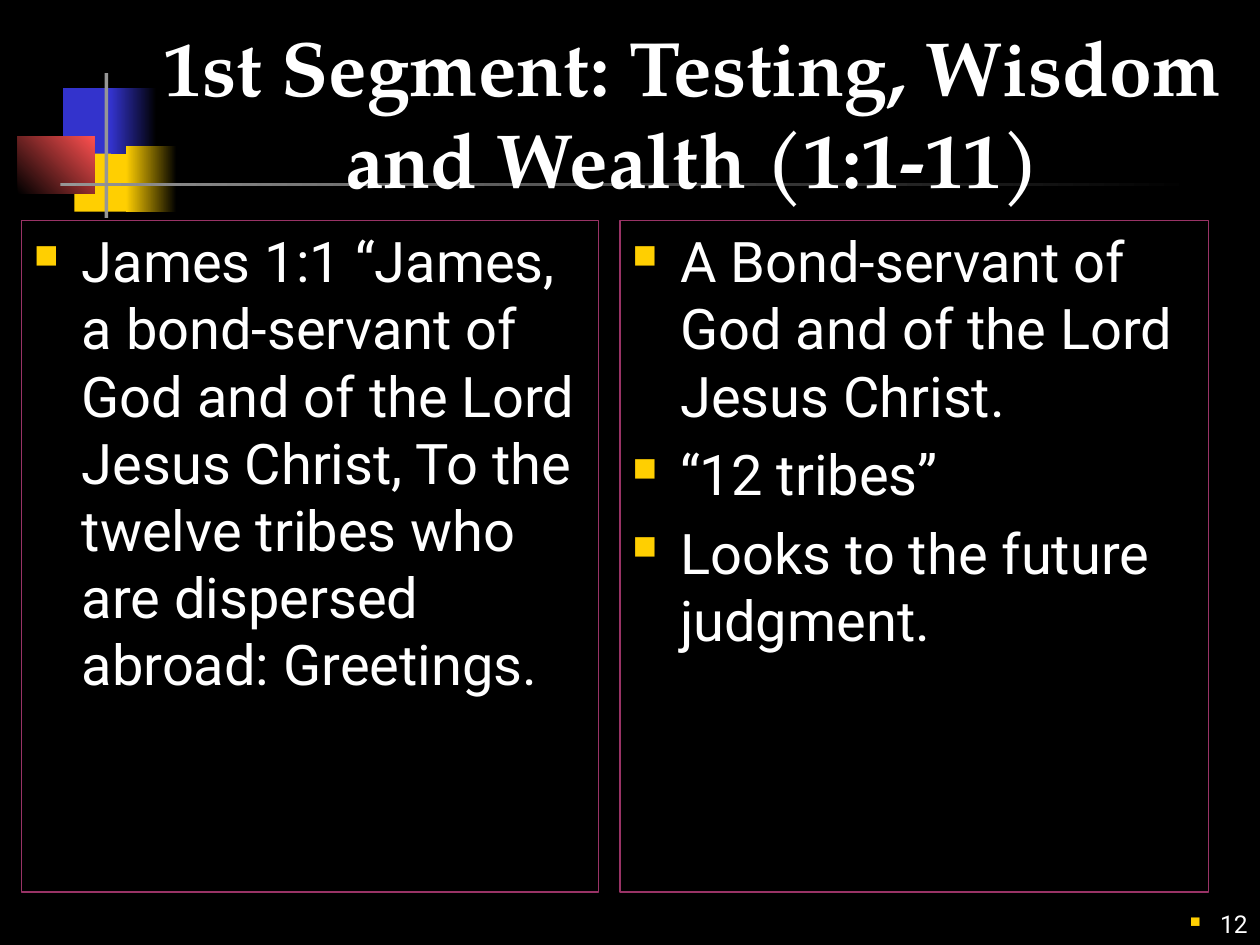
import pptx
import pptx.util
import pptx.dml.color
import pptx.enum.shapes
import pptx.enum.text
from lxml import etree

Inches, Pt = pptx.util.Inches, pptx.util.Pt
ALIGN, ANCHOR = pptx.enum.text.PP_ALIGN, pptx.enum.text.MSO_ANCHOR

COLORS = {
    "black": "000000", "white": "FFFFFF", "yellow": "FFCF01", "blue": "3333CC",
    "red": "FF5050", "gray": "969696", "frame": "993366",
}
HEADING, BODY = "TeX Gyre Pagella", "Roboto"

# box, colours (two make a gradient), gradient angle
ORNAMENT = [
    ((0.59, 1.16, 0.46, 0.52), ["yellow"], 0),
    ((0.5, 0.7, 0.48, 0.52), ["blue"], 0),
    ((0.88, 0.7, 0.36, 0.52), ["blue", "black"], 0),
    ((1, 1.16, 0.4, 0.52), ["yellow", "black"], 0),
    ((0.14, 1.08, 0.61, 0.46), ["black", "red"], 45),
    ((0.83, 0.58, 0.03, 1.15), ["gray"], 0),
    ((0.48, 1.45, 9, 0.03), ["gray", "black"], 0),
]

COLUMN_STYLE = {"size": 32, "hanging": 0.38, "space_before": 6.5, "framed": True}
TEXTS = [
    ((8.92, 7, 1.08, 0.5), ["12"],
     {"size": 14, "align": ALIGN.RIGHT, "anchor": ANCHOR.BOTTOM, "hanging": 0.24}),
    ((1, 0.42, 9, 1.25), ["1st Segment: Testing, Wisdom and Wealth (1:1-11)"],
     {"size": 44, "font": HEADING, "bold": True, "align": ALIGN.CENTER,
      "anchor": ANCHOR.BOTTOM}),
    ((4.92, 1.75, 4.67, 5.33),
     ["A Bond-servant of God and of the Lord Jesus Christ.",
      "“12 tribes”",
      "Looks to the future judgment."], COLUMN_STYLE),
    ((0.17, 1.75, 4.58, 5.33),
     ["James 1:1 “James, a bond-servant of God and of the Lord Jesus Christ, "
      "To the twelve tribes who are dispersed abroad: Greetings."], COLUMN_STYLE),
]


def color(name):
    return pptx.dml.color.RGBColor.from_string(COLORS[name])


def add_block(slide, box, names, angle):
    block = slide.shapes.add_shape(
        pptx.enum.shapes.MSO_SHAPE.RECTANGLE, *map(Inches, box))
    block.shadow.inherit = False
    block.line.fill.background()
    if len(names) == 1:
        block.fill.solid()
        block.fill.fore_color.rgb = color(names[0])
        return
    block.fill.gradient()
    block.fill.gradient_angle = angle
    for stop, name in zip(block.fill.gradient_stops, names):
        stop.color.rgb = color(name)


def add_bullet(paragraph, hanging):
    properties = paragraph._p.get_or_add_pPr()
    properties.set("marL", str(Inches(hanging)))
    properties.set("indent", str(-Inches(hanging)))

    def add(parent, tag, **attributes):
        return etree.SubElement(parent, pptx.oxml.ns.qn(tag), **attributes)

    add(add(properties, "a:buClr"), "a:srgbClr", val=COLORS["yellow"])
    add(properties, "a:buSzPct", val="60000")
    add(properties, "a:buChar", char="■")


def add_text(slide, box, paragraphs, style):
    holder = slide.shapes.add_textbox(*map(Inches, box))
    if style.get("framed"):
        holder.line.color.rgb = color("frame")
        holder.line.width = Pt(0.75)
    frame = holder.text_frame
    frame.word_wrap = True
    frame.vertical_anchor = style.get("anchor", ANCHOR.TOP)
    frame.text = "\n".join(paragraphs)
    font_format = {"name": style.get("font", BODY), "size": Pt(style["size"]),
                   "bold": style.get("bold", False)}
    for paragraph in frame.paragraphs:
        paragraph.alignment = style.get("align", ALIGN.LEFT)
        paragraph.space_before = Pt(style.get("space_before", 0))
        if "hanging" in style:
            add_bullet(paragraph, style["hanging"])
        font = paragraph.runs[0].font
        for attribute, value in font_format.items():
            setattr(font, attribute, value)
        font.color.rgb = color("white")


def main():
    deck = pptx.Presentation()
    deck.slide_width, deck.slide_height = Inches(10), Inches(7.5)
    slide = deck.slides.add_slide(deck.slide_layouts[6])
    slide.background.fill.solid()
    slide.background.fill.fore_color.rgb = color("black")
    for block in ORNAMENT:
        add_block(slide, *block)
    for text in TEXTS:
        add_text(slide, *text)
    deck.save("out.pptx")


if __name__ == "__main__":
    main()
